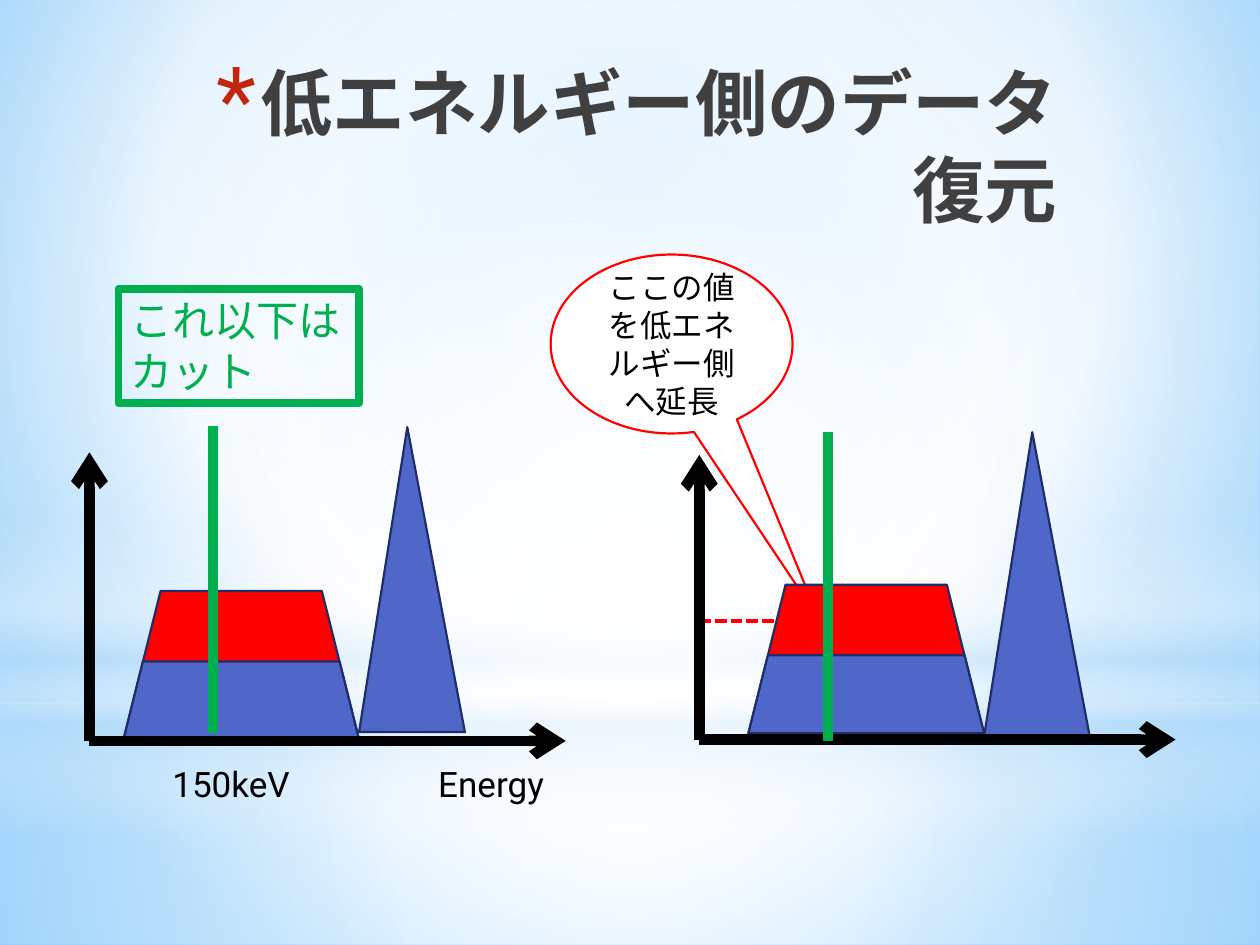
from pptx import Presentation
from pptx.dml.color import RGBColor
from pptx.enum.dml import MSO_LINE
from pptx.enum.shapes import MSO_CONNECTOR, MSO_SHAPE as SHAPE
from pptx.enum.text import MSO_ANCHOR as ANCHOR, MSO_AUTO_SIZE as AUTO, PP_ALIGN as ALIGN
from pptx.oxml import parse_xml
from pptx.oxml.ns import nsdecls, qn
from pptx.util import Inches, Pt

FONT = "Roboto"
COLORS = {
    "title": "404040", "bullet": "C3260C", "black": "000000", "white": "FFFFFF",
    "red": "FF0000", "green": "00B050", "blue": "4E67C8", "navy": "1F2E69",
    "sky": "9ED5FF", "deep_sky": "5BB9FF", "mist": "B4DCFA",
}

TITLE = "低エネルギー側のデータ復元"
CALLOUT = "ここの値を低エネルギー側へ延長"
CUT_NOTE = ["これ以下は", "カット"]
AXIS_LABELS = [("Energy", 3.38), ("150keV", 1.27)]

# Gradient stops: position %, colour, opacity %
CENTER = (50, 50, 50, 50)
BACKGROUND = [(0, "sky", 100), (60, "white", 100), (100, "deep_sky", 100)]
BACKDROP = [  # preset, box, stops, focus rectangle (None for a vertical blend)
    (SHAPE.RECTANGLE, (0, 5.58, 10, 1.92),
     [(0, "white", 91), (37, "white", 76), (100, "mist", 79)], CENTER),
    (SHAPE.RECTANGLE, (0, 0, 10, 5.58),
     [(0, "white", 89), (48, "white", 62), (100, "mist", 79)], CENTER),
    (SHAPE.RECTANGLE, (0, 4.12, 10, 2.5),
     [(0, "white", 0), (29, "white", 30), (45, "mist", 40), (55, "white", 26),
      (65, "mist", 60), (100, "white", 0)], None),
    (SHAPE.OVAL, (0, 1.75, 10, 5.58),
     [(0, "white", 100), (56, "white", 0)], CENTER),
]

# Spectra: origin, axis ends, plateau left and base, peak top, cut-off line
RIGHT = dict(origin=(5.55, 5.87), axis_top=3.61, axis_end=9.33, plateau=5.94,
             base=5.82, peak_top=3.43, cut=(6.57, 5.88, 3.43))
LEFT = dict(origin=(0.71, 5.88), axis_top=3.59, axis_end=4.49, plateau=0.98,
            base=5.87, peak_top=3.39, cut=(1.69, 5.82, 3.38))
PLATEAU_WIDTH = 1.87
PLATEAU_LAYERS = [("red", 1.18), ("blue", 0.62)]
PEAK_SIZE = (0.84, 2.42)

presentation = Presentation()
presentation.slide_width, presentation.slide_height = Inches(10), Inches(7.5)
slide = presentation.slides.add_slide(presentation.slide_layouts[5])


def rgb(name):
    return RGBColor.from_string(COLORS[name])


def set_gradient(fill, properties, stops, focus):
    """Swap the solid fill inside the properties element for a gradient."""
    fill.solid()
    stop_xml = "".join(
        f'<a:gs pos="{position * 1000}"><a:srgbClr val="{COLORS[color]}">'
        f'<a:alpha val="{opacity * 1000}"/></a:srgbClr></a:gs>'
        for position, color, opacity in stops)
    if focus:
        left, top, right, bottom = (value * 1000 for value in focus)
        shade = (f'<a:path path="circle"><a:fillToRect l="{left}" t="{top}" '
                 f'r="{right}" b="{bottom}"/></a:path>')
    else:
        shade = '<a:lin ang="5400000" scaled="0"/>'
    gradient = parse_xml(f'<a:gradFill {nsdecls("a")} rotWithShape="1">'
                         f'<a:gsLst>{stop_xml}</a:gsLst>{shade}</a:gradFill>')
    properties.replace(properties.find(qn("a:solidFill")), gradient)


def add_shape(preset, box, fill=None, line=None, width=1.25):
    shape = slide.shapes.add_shape(preset, *map(Inches, box))
    shape.shadow.inherit = False
    if fill:
        shape.fill.solid()
        shape.fill.fore_color.rgb = rgb(fill)
    else:
        shape.fill.background()
    if line:
        shape.line.color.rgb = rgb(line)
        shape.line.width = Pt(width)
    else:
        shape.line.fill.background()
    return shape


def add_line(start, end, color, width=6, arrow=False):
    points = map(Inches, (*start, *end))
    line = slide.shapes.add_connector(MSO_CONNECTOR.STRAIGHT, *points)
    line.line.color.rgb = rgb(color)
    line.line.width = Pt(width)
    if arrow:
        line.line._get_or_add_ln().append(
            parse_xml(f'<a:tailEnd {nsdecls("a")} type="arrow"/>'))
    line.element.spPr.append(parse_xml(f'<a:effectLst {nsdecls("a")}/>'))
    return line


def write(shape, lines, size, color, align=ALIGN.LEFT, anchor=ANCHOR.TOP, bold=False):
    frame = shape.text_frame
    frame.text = "\n".join(lines)
    frame.word_wrap = True
    frame.auto_size = AUTO.NONE
    frame.vertical_anchor = anchor
    for paragraph in frame.paragraphs:
        paragraph.alignment = align
        for run in paragraph.runs:
            run.font.size, run.font.bold = Pt(size), bold
            run.font.name = FONT
            run.font.color.rgb = rgb(color)
            run.font._element.find(qn("a:latin")).addnext(
                parse_xml(f'<a:ea {nsdecls("a")} typeface="{FONT}"/>'))


def add_spectrum(origin, axis_top, axis_end, plateau, base, peak_top, cut):
    peak_left = plateau + PLATEAU_WIDTH
    peak = add_shape(SHAPE.ISOSCELES_TRIANGLE, (peak_left, peak_top, *PEAK_SIZE), "blue", "navy")
    peak.adjustments[0] = 0.456
    for color, height in PLATEAU_LAYERS:
        add_shape(SHAPE.TRAPEZOID, (plateau, base - height, PLATEAU_WIDTH, height),
                  color, "navy")
    x, y = origin
    add_line(origin, (x, axis_top), "black", arrow=True)
    add_line(origin, (axis_end, y), "black", arrow=True)
    cut_x, cut_bottom, cut_top = cut
    add_line((cut_x, cut_bottom), (cut_x, cut_top), "green")


# Background and backdrop
background_fill = slide.background.fill
background_fill.solid()
set_gradient(background_fill, slide.element.find(".//" + qn("p:bgPr")),
             BACKGROUND, (20, 10, 20, 60))
for preset, box, stops, focus in BACKDROP:
    panel = add_shape(preset, box)
    set_gradient(panel.fill, panel.element.spPr, stops, focus)

# Title with its asterisk bullet, in front of the backdrop
title = slide.shapes.title
title.left, title.top, title.width, title.height = map(Inches, (1.37, 0.41, 7.12, 1.25))
write(title, [TITLE], 41.4, "title", ALIGN.RIGHT, bold=True)
title_format = title.text_frame.paragraphs[0]._p.get_or_add_pPr()
title_format.set("marL", str(Inches(0.35)))
title_format.set("indent", str(Inches(-0.35)))
for bullet in (f'<a:buClr {nsdecls("a")}><a:srgbClr val="{COLORS["bullet"]}"/></a:buClr>',
               f'<a:buSzPct {nsdecls("a")} val="128000"/>',
               f'<a:buFont {nsdecls("a")} typeface="{FONT}"/>',
               f'<a:buChar {nsdecls("a")} char="*"/>'):
    title_format.append(parse_xml(bullet))
slide.shapes.element.append(title.element)

# Right spectrum with the extension line and callout behind it
extension = add_line((5.55, 4.93), (6.73, 4.93), "red", 2.25)
extension.line.dash_style = MSO_LINE.SQUARE_DOT
callout = add_shape(SHAPE.OVAL_CALLOUT, (4.37, 2.02, 1.92, 1.42), "white", "red")
callout.adjustments[0], callout.adjustments[1] = 0.61, 1.538
write(callout, [CALLOUT], 18, "black", ALIGN.CENTER, ANCHOR.MIDDLE)
add_spectrum(**RIGHT)

# Left spectrum with its labels
for label, left in AXIS_LABELS:
    text_box = slide.shapes.add_textbox(*map(Inches, (left, 6, 1.3, 0.44)))
    write(text_box, [label], 20, "black")
add_spectrum(**LEFT)
cut_note = add_shape(SHAPE.RECTANGLE, (0.94, 2.29, 1.91, 0.91), line="green", width=4.5)
write(cut_note, CUT_NOTE, 24, "green")

presentation.save("out.pptx")
